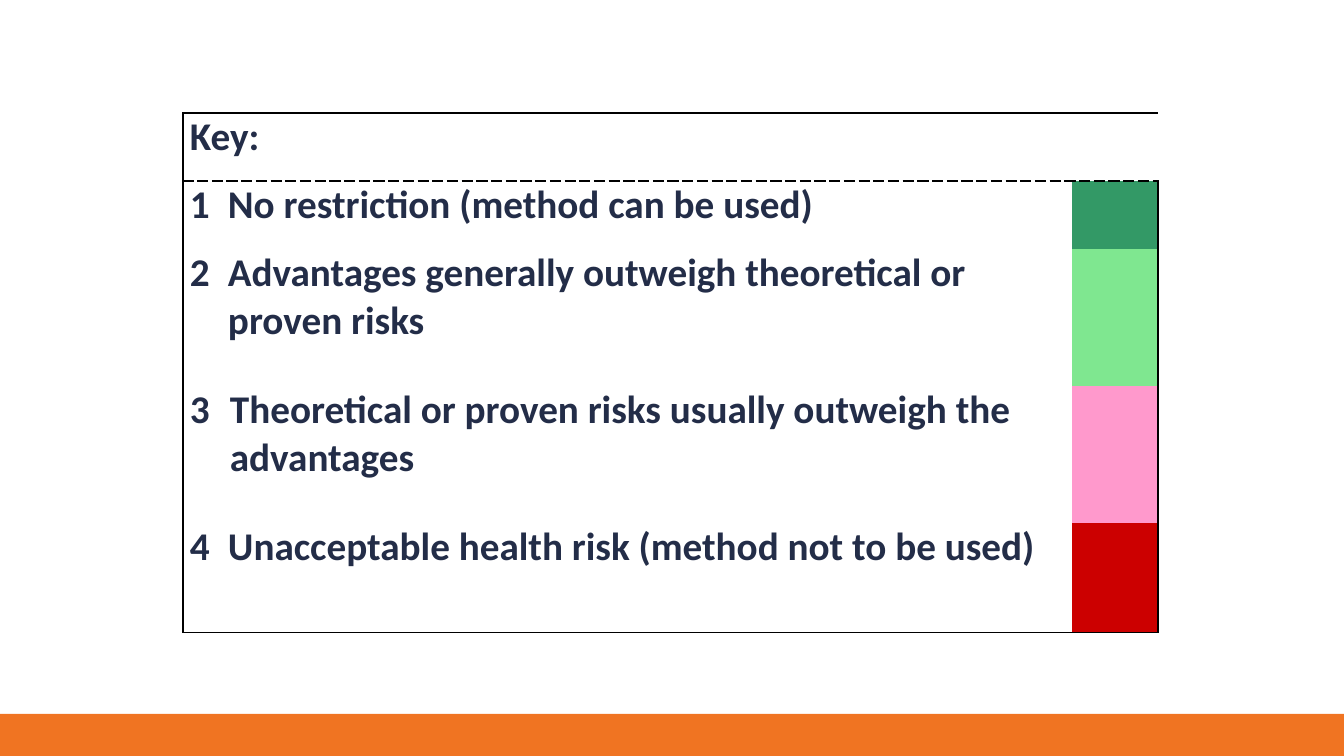
from dataclasses import dataclass

from lxml import etree
from pptx import Presentation
from pptx import util as u
from pptx.dml.color import RGBColor
from pptx.enum import shapes
from pptx.oxml import ns

WIDE, HIGH = 1344, 756
PX = 12192000 / WIDE


@dataclass(frozen=True)
class Theme:
    font: str = "Calibri"
    size: int = 28
    ink: str = "232D48"
    line: str = "000000"
    band: str = "F07422"


THEME = Theme()
COLS = [40, 849, 86]
ROWS = [68, 68, 137, 137, 110]
HANG = 38
# Lines of text, swatch colour, number of columns the text spans
KEY = [
    (["Key:"], None, 3),
    (["1\tNo restriction (method can be used)"], "339966", 2),
    (["2\tAdvantages generally outweigh theoretical or", "proven risks"], "7FE790", 2),
    (["3", "Theoretical or proven risks usually outweigh the advantages"], "FF99CC", 1),
    (["4\tUnacceptable health risk (method not to be used)"], "CC0000", 2),
]


def px(n):
    return u.Emu(round(n * PX))


def add(parent, tag, **attrs):
    return etree.SubElement(parent, ns.qn("a:" + tag), attrs)


def paint(fill, color):
    fill.solid()
    fill.fore_color.rgb = RGBColor.from_string(color)


def edge(cell, row, col):
    """Frame the table, with a dashed rule under its heading."""
    styles = {
        "lnL": "solid" if col == 0 else None,
        "lnR": "solid" if col == len(COLS) - 1 else None,
        "lnT": {0: "solid", 1: "dash"}.get(row),
        "lnB": {0: "dash", len(ROWS) - 1: "solid"}.get(row),
    }
    props = cell._tc.get_or_add_tcPr()
    for tag, dash in styles.items():
        line = add(props, tag, w=str(u.Pt(1)))
        if dash:
            add(add(line, "solidFill"), "srgbClr", val=THEME.line)
            add(line, "prstDash", val=dash)
        else:
            add(line, "noFill")


def write(cell, lines):
    cell.text_frame.text = "\n".join(lines)
    hang = "\t" in lines[0]
    for i, para in enumerate(cell.text_frame.paragraphs):
        if hang:
            props = para._p.get_or_add_pPr()
            props.set("marL", str(px(HANG)))
            props.set("indent", str(-px(HANG) if i == 0 else 0))
        for run in para.runs:
            font = run.font
            font.name, font.size, font.bold = THEME.font, u.Pt(THEME.size), True
            font.color.rgb = RGBColor.from_string(THEME.ink)


def band(slide):
    bar = slide.shapes.add_shape(
        shapes.MSO_SHAPE.RECTANGLE, 0, px(714), px(WIDE), px(HIGH - 714))
    bar.shadow.inherit = False
    paint(bar.fill, THEME.band)
    bar.line.fill.background()


def legend(slide):
    table = slide.shapes.add_table(
        len(ROWS), len(COLS), px(183), px(113), px(sum(COLS)), px(sum(ROWS))).table
    table.first_row = table.horz_banding = False
    for col, wide in zip(table.columns, COLS):
        col.width = px(wide)
    for r, (lines, color, span) in enumerate(KEY):
        table.rows[r].height = px(ROWS[r])
        for c in range(len(COLS)):
            cell = table.cell(r, c)
            cell.margin_left = cell.margin_right = px(7)
            cell.margin_top = cell.margin_bottom = 0
            edge(cell, r, c)
            cell.fill.background()
        if span > 1:
            table.cell(r, 0).merge(table.cell(r, span - 1))
            write(table.cell(r, 0), lines)
        else:
            for c, line in enumerate(lines):
                write(table.cell(r, c), [line])
        if color:
            paint(table.cell(r, len(COLS) - 1).fill, color)


def main():
    deck = Presentation()
    deck.slide_width, deck.slide_height = px(WIDE), px(HIGH)
    slide = deck.slides.add_slide(deck.slide_layouts[6])
    band(slide)
    legend(slide)
    deck.save("out.pptx")


if __name__ == "__main__":
    main()
